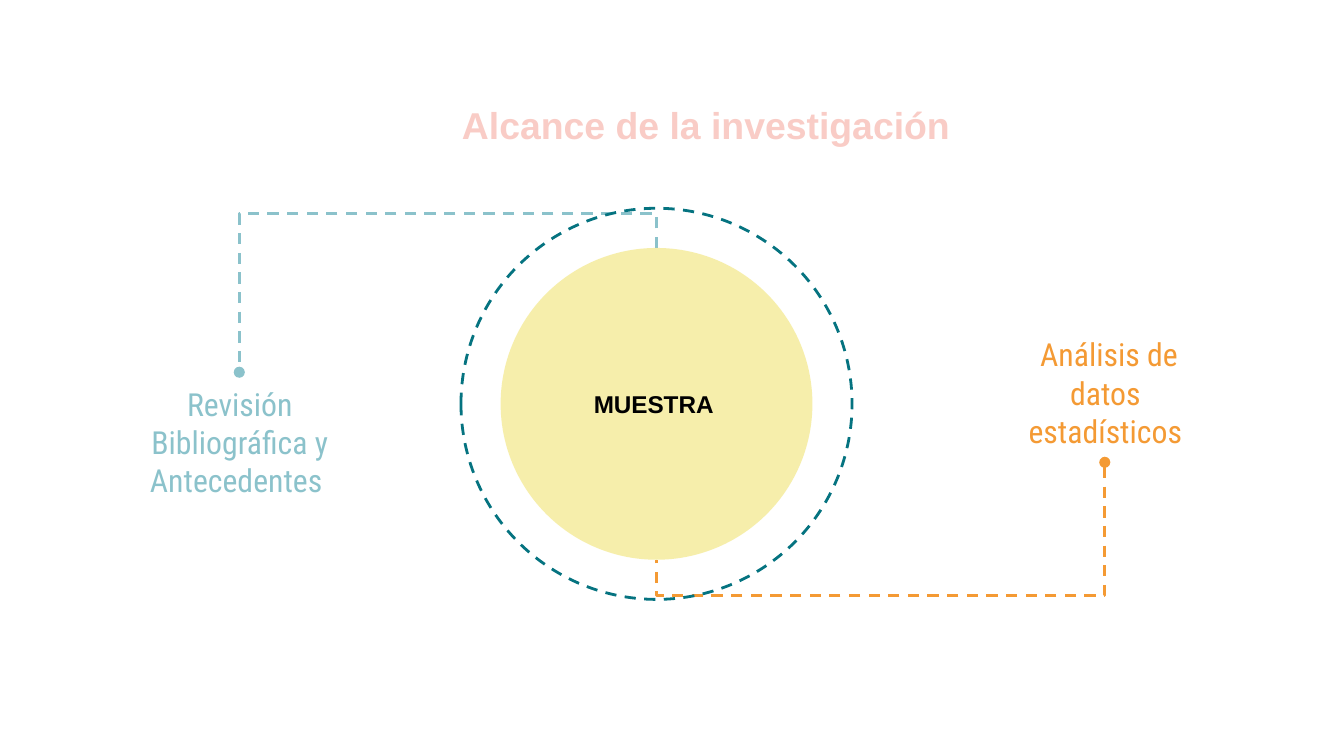
from lxml.etree import SubElement
from pptx import Presentation
from pptx.dml.color import RGBColor
from pptx.enum.dml import MSO_LINE
from pptx.enum.shapes import MSO_CONNECTOR, MSO_SHAPE
from pptx.enum.text import MSO_ANCHOR, PP_ALIGN
from pptx.oxml.ns import qn
from pptx.util import Inches, Pt

WIDTH = 10
HEIGHT = WIDTH * 9 / 16
CENTER = (4.885, 3.005)
RING, DISC = 2.91, 2.32
BLUE, ORANGE, TEAL, YELLOW, PINK = "8BC2CB", "F49A34", "057380", "EFE05F", "F9CCC6"

TITLE = dict(lines=["Alcance de la investigación"], size=20, name="Arial", bold=True, color=PINK)
SAMPLE = dict(lines=["MUESTRA "], size=13, name="Arial", bold=True, color="000000")
LABEL = dict(size=17, name="Roboto Condensed", bold=False)
LABELS = [
    ((7.35, 2.39, 1.75, 1.06), dict(LABEL, lines=[" Análisis de datos estadísticos"], color=ORANGE)),
    ((0.91, 2.76, 1.75, 1.06),
     dict(LABEL, lines=["Revisión Bibliográfica y", "Antecedentes "], color=BLUE)),
]
DISC_TOP = (CENTER[0], CENTER[1] - DISC / 2)
DISC_BOTTOM = (CENTER[0], CENTER[1] + DISC / 2)
# start, end, height of the horizontal run, end with the dot, colour
LINKS = [
    (DISC_TOP, (1.78, 2.77), 1.59, "a:tailEnd", BLUE),
    ((8.22, 3.44), DISC_BOTTOM, 4.43, "a:headEnd", ORANGE),
]


def rgb(color):
    return RGBColor.from_string(color)


def write(shape, lines, color, size, anchor=MSO_ANCHOR.MIDDLE, **font):
    frame = shape.text_frame
    frame.word_wrap, frame.vertical_anchor = True, anchor
    for side in ("left", "top", "right", "bottom"):
        setattr(frame, f"margin_{side}", Inches(0.1))
    for index, line in enumerate(lines):
        para = frame.add_paragraph() if index else frame.paragraphs[0]
        para.alignment = PP_ALIGN.CENTER
        span = para.add_run()
        span.text = line
        span.font.color.rgb = rgb(color)
        for name, value in dict(font, size=Pt(size)).items():
            setattr(span.font, name, value)
    return frame.paragraphs[0]


def add_text(page, place, text):
    return write(page.shapes.add_textbox(*map(Inches, place)), **text)


def dash(line, color):
    line.color.rgb = rgb(color)
    line.width, line.dash_style = Pt(1.5), MSO_LINE.DASH


def add_link(page, start, end, level, dotted_end, color):
    """Elbow that leaves vertically: a horizontal elbow turned by 90 degrees."""
    (x1, y1), (x2, y2) = start, end
    middle_x, middle_y = (x1 + x2) / 2, (y1 + y2) / 2
    half_run, half_rise = (y2 - y1) / 2, (x1 - x2) / 2
    link = page.shapes.add_connector(
        MSO_CONNECTOR.ELBOW,
        Inches(middle_x - half_run), Inches(middle_y - half_rise),
        Inches(middle_x + half_run), Inches(middle_y + half_rise))
    dash(link.line, color)
    properties = link._element.spPr
    properties.find(qn("a:xfrm")).set("rot", str(90 * 60000))
    bend = round((level - y1) / (y2 - y1) * 100000)
    guides = properties.find(qn("a:prstGeom")).find(qn("a:avLst"))
    SubElement(guides, qn("a:gd"), name="adj1", fmla=f"val {bend}")
    SubElement(properties.find(qn("a:ln")), qn(dotted_end), type="oval")
    SubElement(properties, qn("a:effectLst"))


def add_circle(page, size):
    left, top = (middle - size / 2 for middle in CENTER)
    circle = page.shapes.add_shape(MSO_SHAPE.OVAL, *map(Inches, (left, top, size, size)))
    circle.shadow.inherit = False
    return circle


deck = Presentation()
deck.slide_width, deck.slide_height = Inches(WIDTH), Inches(HEIGHT)
page = deck.slides.add_slide(deck.slide_layouts[6])

for place, text in LABELS:
    add_text(page, place, text)
for link in LINKS:
    add_link(page, *link)

heading = add_text(page, (0.2, 0.49, 9.61, 0.79), dict(TITLE, anchor=MSO_ANCHOR.TOP))
heading.line_spacing, heading.space_before = 1.5, Pt(12)
heading._p.get_or_add_pPr().set("marL", str(Inches(0.5)))

ring = add_circle(page, RING)
ring.fill.background()
dash(ring.line, TEAL)

disc = add_circle(page, DISC)
disc.fill.solid()
disc.fill.fore_color.rgb = rgb(YELLOW)
fill_color = disc._element.spPr.find(qn("a:solidFill")).find(qn("a:srgbClr"))
SubElement(fill_color, qn("a:alpha"), val="52000")
disc.line.fill.background()
write(disc, **SAMPLE)

deck.save("out.pptx")
